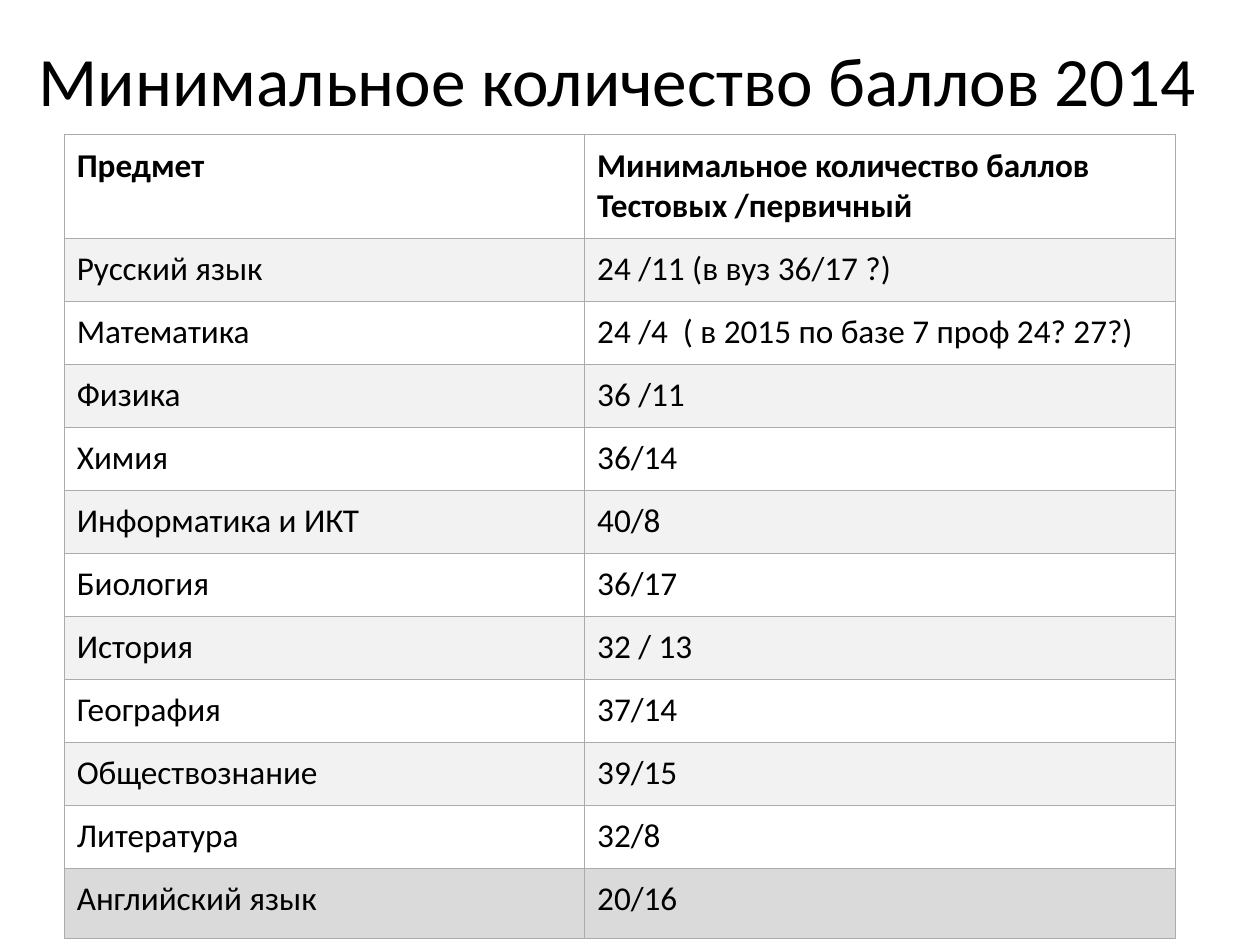
from typing import NamedTuple

from lxml.etree import SubElement
from pptx import Presentation
from pptx.dml.color import RGBColor
from pptx.enum.text import MSO_ANCHOR, MSO_AUTO_SIZE, PP_ALIGN
from pptx.oxml.ns import qn
from pptx.util import Inches, Pt

COLORS = {"text": "000000", "band": "F2F2F2", "last": "DADADA", "line": "A9ABAD"}


class Score(NamedTuple):
    subject: str
    points: str


SCORES = [
    Score("Предмет", "Минимальное количество баллов\nТестовых /первичный"),
    Score("Русский язык", "24 /11 (в вуз 36/17 ?)"),
    Score("Математика", "24 /4  ( в 2015 по базе 7 проф 24? 27?)"),
    Score("Физика", "36 /11"),
    Score("Химия", "36/14"),
    Score("Информатика и ИКТ", "40/8"),
    Score("Биология", "36/17"),
    Score("История", "32 / 13"),
    Score("География", "37/14"),
    Score("Обществознание", "39/15"),
    Score("Литература", "32/8"),
    Score("Английский язык", "20/16"),
]
WIDTHS = [4.13, 4.69]
HEIGHTS = [0.58] + [0.45] * (len(SCORES) - 2) + [0.56]


def write(frame, text: str, *, size: float, bold: bool = False,
          align: PP_ALIGN = PP_ALIGN.LEFT) -> None:
    frame.text = text
    for para in frame.paragraphs:
        para.alignment = align
        for run in para.runs:
            font = run.font
            font.name = "Calibri"
            font.size = Pt(size)
            font.bold = bold
            font.color.rgb = RGBColor.from_string(COLORS["text"])


def border(cell) -> None:
    props = cell._tc.get_or_add_tcPr()
    for place, side in enumerate(("lnL", "lnR", "lnT", "lnB")):
        line = props.makeelement(qn(f"a:{side}"), {"w": str(Pt(0.75))})
        fill = SubElement(line, qn("a:solidFill"))
        SubElement(fill, qn("a:srgbClr"), val=COLORS["line"])
        props.insert(place, line)


def shade(cell, row: int) -> None:
    if row % 2 == 0:
        cell.fill.background()
        return
    tone = "last" if row == len(SCORES) - 1 else "band"
    cell.fill.solid()
    cell.fill.fore_color.rgb = RGBColor.from_string(COLORS[tone])


def draw_title(slide, text: str) -> None:
    title = slide.shapes.title
    title.left, title.top = Inches(0), Inches(0)
    title.width, title.height = Inches(9.8), Inches(1.25)
    frame = title.text_frame
    frame.auto_size = MSO_AUTO_SIZE.NONE
    frame.vertical_anchor = MSO_ANCHOR.MIDDLE
    write(frame, text, size=39.6, align=PP_ALIGN.CENTER)


def draw_table(slide, scores: list[Score]) -> None:
    table = slide.shapes.add_table(
        len(scores), len(WIDTHS), Inches(0.51), Inches(1.07),
        Inches(sum(WIDTHS)), Inches(sum(HEIGHTS))).table
    table.horz_banding = False
    for column, width in zip(table.columns, WIDTHS):
        column.width = Inches(width)
    for row, (score, height) in enumerate(zip(scores, HEIGHTS)):
        table.rows[row].height = Inches(height)
        for cell, text in zip(table.rows[row].cells, score):
            cell.margin_left = cell.margin_right = Inches(0.1)
            cell.margin_top = cell.margin_bottom = Inches(0.09)
            write(cell.text_frame, text, size=19, bold=row == 0)
            shade(cell, row)
            border(cell)


def main() -> None:
    deck = Presentation()
    deck.slide_width, deck.slide_height = Inches(10), Inches(7.5)
    slide = deck.slides.add_slide(deck.slide_layouts[5])
    draw_title(slide, "Минимальное количество баллов 2014")
    draw_table(slide, SCORES)
    deck.save("out.pptx")


if __name__ == "__main__":
    main()
